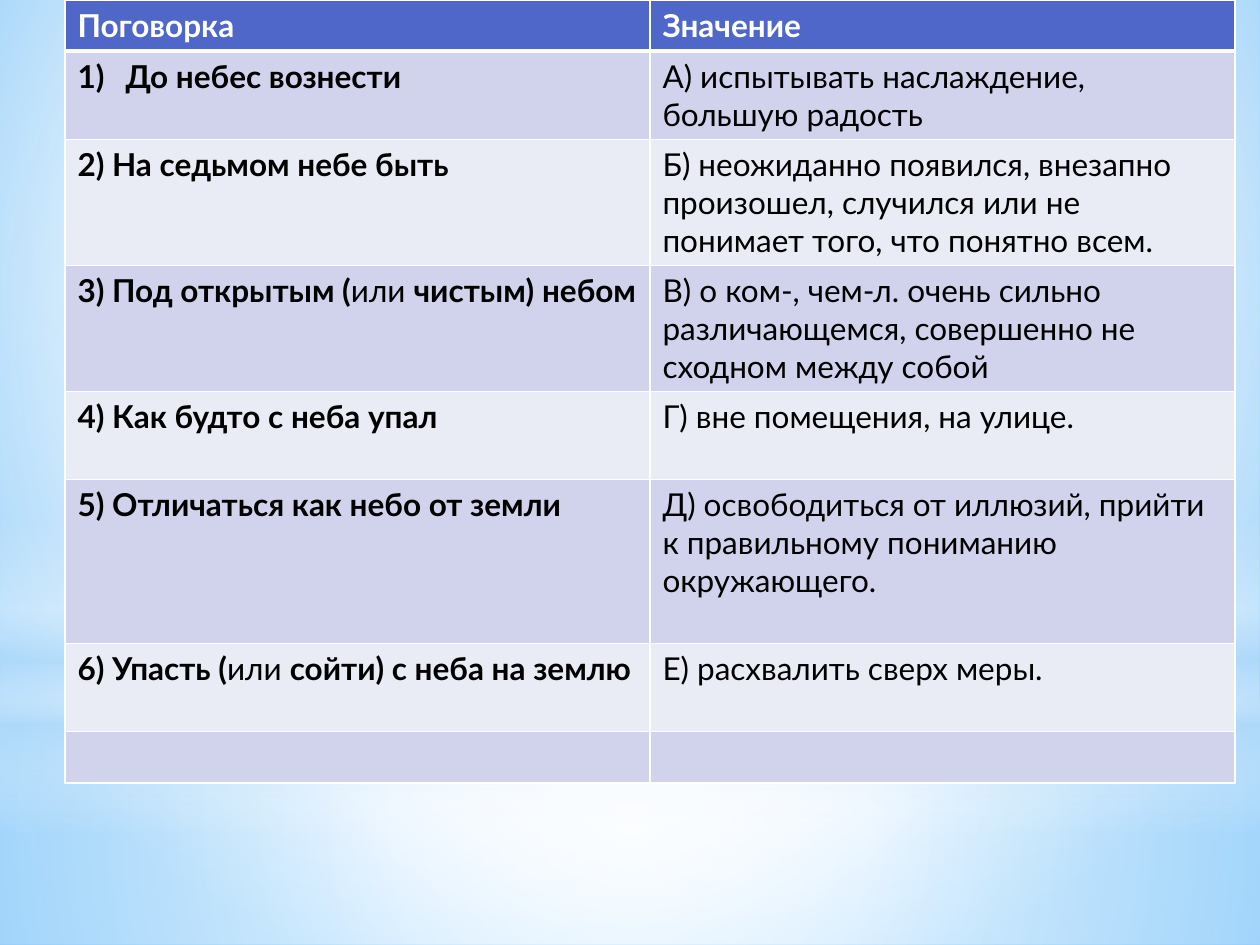
from pptx import Presentation
from pptx import util as u
from pptx.dml.color import RGBColor
from pptx.enum import shapes
from pptx.oxml import parse_xml
from pptx.oxml.ns import nsdecls, qn

# Content: a cell is a list of (text, bold) runs
HEADER = [[("Поговорка", True)], [("Значение", True)]]
SAYINGS = [
    [("До небес вознести", True)],
    [("2) На седьмом небе быть", True)],
    [("3) Под открытым (", True), ("или ", False), ("чистым) небом", True)],
    [("4) Как будто с неба упал", True)],
    [("5) Отличаться как небо от земли", True)],
    [("6) Упасть (", True), ("или ", False), ("сойти) с неба на землю", True)],
]
MEANINGS = [
    "А) испытывать наслаждение, большую радость",
    "Б) неожиданно появился, внезапно произошел, случился или не понимает того, что понятно всем.",
    "В) о ком-, чем-л. очень сильно различающемся, совершенно не сходном между собой",
    "Г) вне помещения, на улице.",
    "Д) освободиться от иллюзий, прийти к правильному пониманию окружающего.",
    "Е) расхвалить сверх меры.",
]
ROWS = [HEADER] + [[s, [(m, False)]] for s, m in zip(SAYINGS, MEANINGS)] + [[[], []]]
HEIGHTS = [51, 88, 126, 126, 88, 164, 88, 52]
LEFT, COL_W = 65, 585
HEAD_FILL, BANDS = "4E67C8", ("E9EBF5", "D0D3EB")

# Sky: gradient stops are (position, colour, opacity) in percent
W, H = 1260, 945
CENTRE = (50, 50, 50, 50)
BACKDROP = [(0, "9ED5FF", 100), (60, "FFFFFF", 100), (100, "5BB9FF", 100)]
RECT, OVAL = shapes.MSO_SHAPE.RECTANGLE, shapes.MSO_SHAPE.OVAL
SKY = [  # shape, top, height, stops, focus (None: vertical)
    (RECT, 703, 242, [(0, "FFFFFF", 91), (37, "FFFFFF", 76), (100, "B4DCFA", 79)], CENTRE),
    (RECT, 0, 703, [(0, "FFFFFF", 89), (48, "FFFFFF", 62), (100, "B4DCFA", 79)], CENTRE),
    (RECT, 519, 315, [(0, "FFFFFF", 0), (29, "FFFFFF", 30), (45, "B4DCFA", 40),
                      (55, "FFFFFF", 26), (65, "B4DCFA", 60), (100, "FFFFFF", 0)], None),
    (OVAL, 220, 703, [(0, "FFFFFF", 100), (56, "FFFFFF", 0)], CENTRE),
]


def px(n):
    return u.Emu(n * 914400 // 126)


def rgb(value):
    return RGBColor.from_string(value)


def set_gradient(parent, stops, focus):
    """Swap the solid fill in parent for a gradient."""
    gs = "".join(f'<a:gs pos="{p * 1000}"><a:srgbClr val="{c}"><a:alpha val="{o * 1000}"/>'
                 f'</a:srgbClr></a:gs>' for p, c, o in stops)
    if focus:
        sides = " ".join(f'{k}="{v * 1000}"' for k, v in zip("ltrb", focus))
        way = f'<a:path path="circle"><a:fillToRect {sides}/></a:path>'
    else:
        way = '<a:lin ang="5400000" scaled="0"/>'
    grad = parse_xml(f'<a:gradFill {nsdecls("a")} rotWithShape="1">'
                     f'<a:gsLst>{gs}</a:gsLst>{way}</a:gradFill>')
    parent.replace(parent.find(qn("a:solidFill")), grad)


def set_borders(cell, widths):
    tcPr = cell._tc.get_or_add_tcPr()
    for i, (side, pt) in enumerate(widths.items()):
        tcPr.insert(i, parse_xml(
            f'<a:ln{side} {nsdecls("a")} w="{u.Pt(pt)}"><a:solidFill>'
            f'<a:srgbClr val="FFFFFF"/></a:solidFill></a:ln{side}>'))


prs = Presentation()
prs.slide_width, prs.slide_height = px(W), px(H)
s = prs.slides.add_slide(prs.slide_layouts[6])

# Background and sky layers
s.background.fill.solid()
s.background.fill.fore_color.rgb = rgb("FFFFFF")
set_gradient(s.element.find(".//" + qn("p:bgPr")), BACKDROP, (20, 10, 20, 60))
for kind, top, height, stops, focus in SKY:
    sp = s.shapes.add_shape(kind, 0, px(top), px(W), px(height))
    sp.shadow.inherit = False
    sp.line.fill.background()
    sp.fill.solid()
    sp.fill.fore_color.rgb = rgb("FFFFFF")
    set_gradient(sp.element.spPr, stops, focus)

# Table of sayings and meanings
table = s.shapes.add_table(len(ROWS), 2, px(LEFT), 0, px(2 * COL_W), px(sum(HEIGHTS))).table
for col in table.columns:
    col.width = px(COL_W)
for i, (row, height) in enumerate(zip(ROWS, HEIGHTS)):
    table.rows[i].height = px(height)
    for j, runs in enumerate(row):
        cell = table.cell(i, j)
        cell.fill.solid()
        cell.fill.fore_color.rgb = rgb(BANDS[i % 2] if i else HEAD_FILL)
        set_borders(cell, {"L": 1, "R": 1, "T": 3 if i == 1 else 1, "B": 1 if i else 3})
        p = cell.text_frame.paragraphs[0]
        p.font.size = u.Pt(18)
        for words, bold in runs:
            r = p.add_run()
            r.text = words
            style = {"name": "Lato", "size": u.Pt(18), "bold": bold}
            for key, value in style.items():
                setattr(r.font, key, value)
            r.font.color.rgb = rgb("000000" if i else "FFFFFF")

# Automatic number of the first saying
pPr = table.cell(1, 0).text_frame.paragraphs[0]._p.get_or_add_pPr()
pPr.set("marL", str(px(48)))
pPr.set("indent", str(-px(48)))
pPr.insert(0, parse_xml(f'<a:buAutoNum {nsdecls("a")} type="arabicParenR"/>'))

prs.save("out.pptx")
